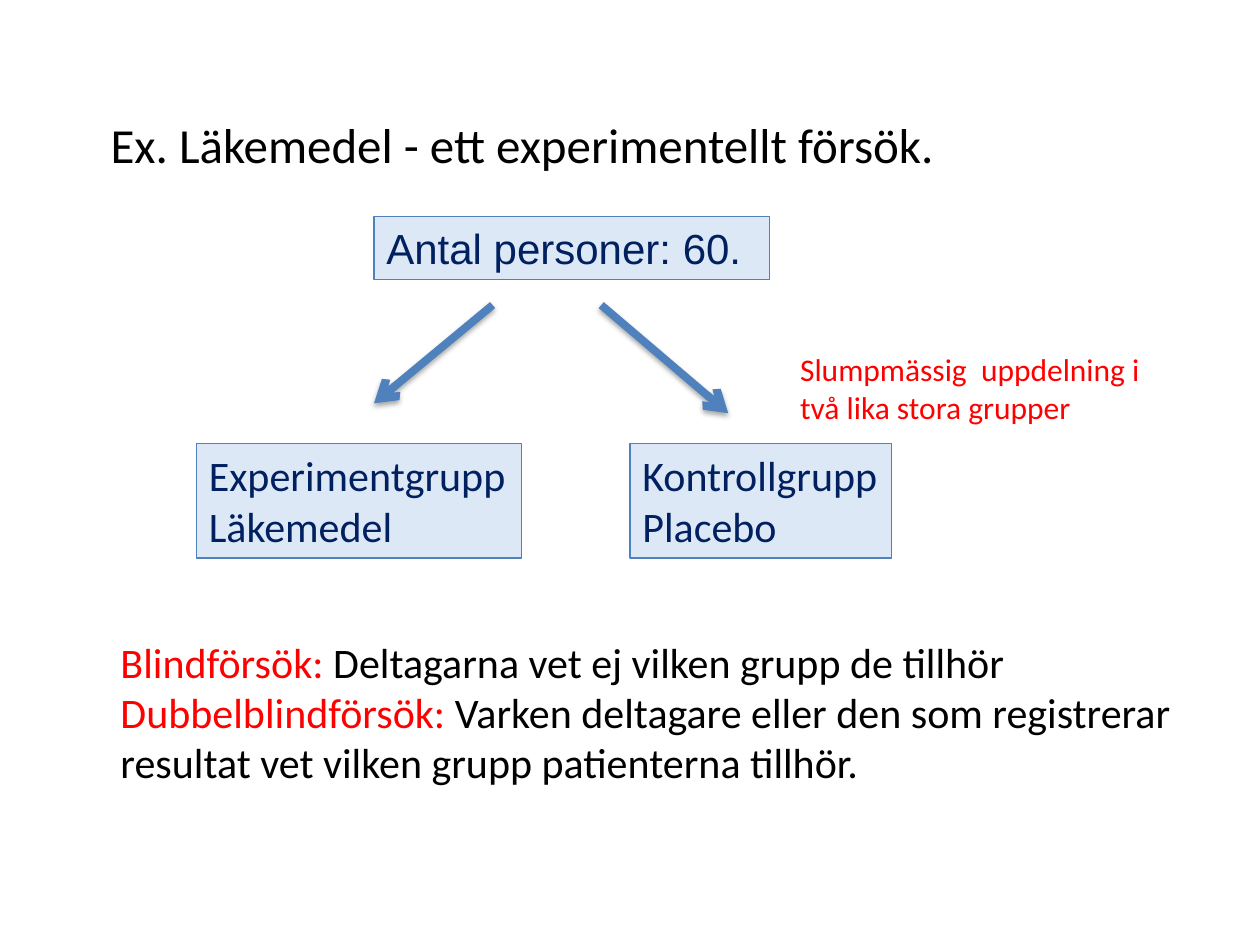
from lxml import etree
from pptx import Presentation
from pptx.dml.color import RGBColor
from pptx.enum.shapes import MSO_CONNECTOR, MSO_SHAPE
from pptx.enum.text import MSO_ANCHOR, PP_ALIGN
from pptx.oxml.ns import qn
from pptx.util import Cm, Pt

RECTANGLE = MSO_SHAPE.RECTANGLE
STRAIGHT = MSO_CONNECTOR.STRAIGHT
TOP, LEFT = MSO_ANCHOR.TOP, PP_ALIGN.LEFT

COLOURS = {
    "black": "000000",
    "red": "FF0000",
    "navy": "002060",
    "blue": "4F81BD",
    "light": "8EB4E3",
}


def rgb(name):
    return RGBColor.from_string(COLOURS[name])


def add_alpha(colour_element, percent):
    etree.SubElement(colour_element, qn("a:alpha"), val=str(percent * 1000))


def write_text(frame, paragraphs, size=24, font="Calibri", colour="black"):
    """Fill a frame; each paragraph is a string or a list of (text, colour)."""
    frame.word_wrap = True
    frame.vertical_anchor = TOP
    for index, content in enumerate(paragraphs):
        para = frame.paragraphs[0] if index == 0 else frame.add_paragraph()
        para.alignment = LEFT
        spans = [(content, colour)] if isinstance(content, str) else content
        for text, span_colour in spans:
            span = para.add_run()
            span.text = text
            span.font.size = Pt(size)
            span.font.name = font
            span.font.color.rgb = rgb(span_colour)


class SlideBuilder:
    def __init__(self, page):
        self.page = page

    def text(self, place, paragraphs, **style):
        box = self.page.shapes.add_textbox(*map(Cm, place))
        write_text(box.text_frame, paragraphs, **style)

    def group_box(self, place, paragraphs, **style):
        box = self.page.shapes.add_shape(RECTANGLE, *map(Cm, place))
        box.shadow.inherit = False
        box.fill.solid()
        box.fill.fore_color.rgb = rgb("light")
        fill = box._element.spPr.find(qn("a:solidFill"))
        add_alpha(fill.find(qn("a:srgbClr")), 30)
        box.line.color.rgb = rgb("blue")
        box.line.width = Pt(0.75)
        write_text(box.text_frame, paragraphs, colour="navy", **style)

    def arrow(self, start, end):
        """Draw a thick arrow with a soft shadow below it."""
        arrow = self.page.shapes.add_connector(
            STRAIGHT, *map(Cm, (*start, *end)))
        arrow.line.color.rgb = rgb("blue")
        arrow.line.width = Pt(4.5)
        properties = arrow._element.spPr
        etree.SubElement(properties.find(qn("a:ln")), qn("a:tailEnd"), type="arrow")
        effects = etree.SubElement(properties, qn("a:effectLst"))
        shadow = etree.SubElement(
            effects, qn("a:outerShdw"), blurRad=str(Pt(3.1)), dist=str(Pt(1.8)),
            dir=str(90 * 60000), rotWithShape="0")
        colour = etree.SubElement(shadow, qn("a:srgbClr"), val=COLOURS["black"])
        add_alpha(colour, 35)


def main():
    deck = Presentation()
    deck.slide_width, deck.slide_height = Cm(25.4), Cm(19.05)
    slide = SlideBuilder(deck.slides.add_slide(deck.slide_layouts[6]))

    slide.text((1.98, 2.18, 21.44, 1.45),
               ["Ex. Läkemedel - ett experimentellt försök."], size=28)

    group_top, group_height = 8.94, 2.31
    slide.group_box((3.96, group_top, 6.55, group_height),
                    ["Experimentgrupp", "Läkemedel"])

    arrow_top = 6.15
    slide.arrow((12.12, arrow_top), (14.68, 8.33))
    slide.arrow((9.93, arrow_top), (7.54, 8.13))

    slide.text((15.88, 6.93, 8.13, 1.8),
               ["Slumpmässig  uppdelning i två lika stora grupper"],
               size=18, colour="red")
    slide.group_box((7.54, 4.37, 7.98, 1.27), ["Antal personer: 60."], font="Arial")
    slide.group_box((12.7, group_top, 5.28, group_height),
                    ["Kontrollgrupp", "Placebo"])

    slide.text((2.18, 12.7, 21.82, 3.33), [
        [("Blindförsök:", "red"),
         (" Deltagarna vet ej vilken grupp de tillhör", "black")],
        [("Dubbelblindförsök:", "red"),
         (" Varken deltagare eller den som registrerar resultat vet vilken "
          "grupp patienterna tillhör.", "black")],
    ])

    deck.save("out.pptx")


if __name__ == "__main__":
    main()
